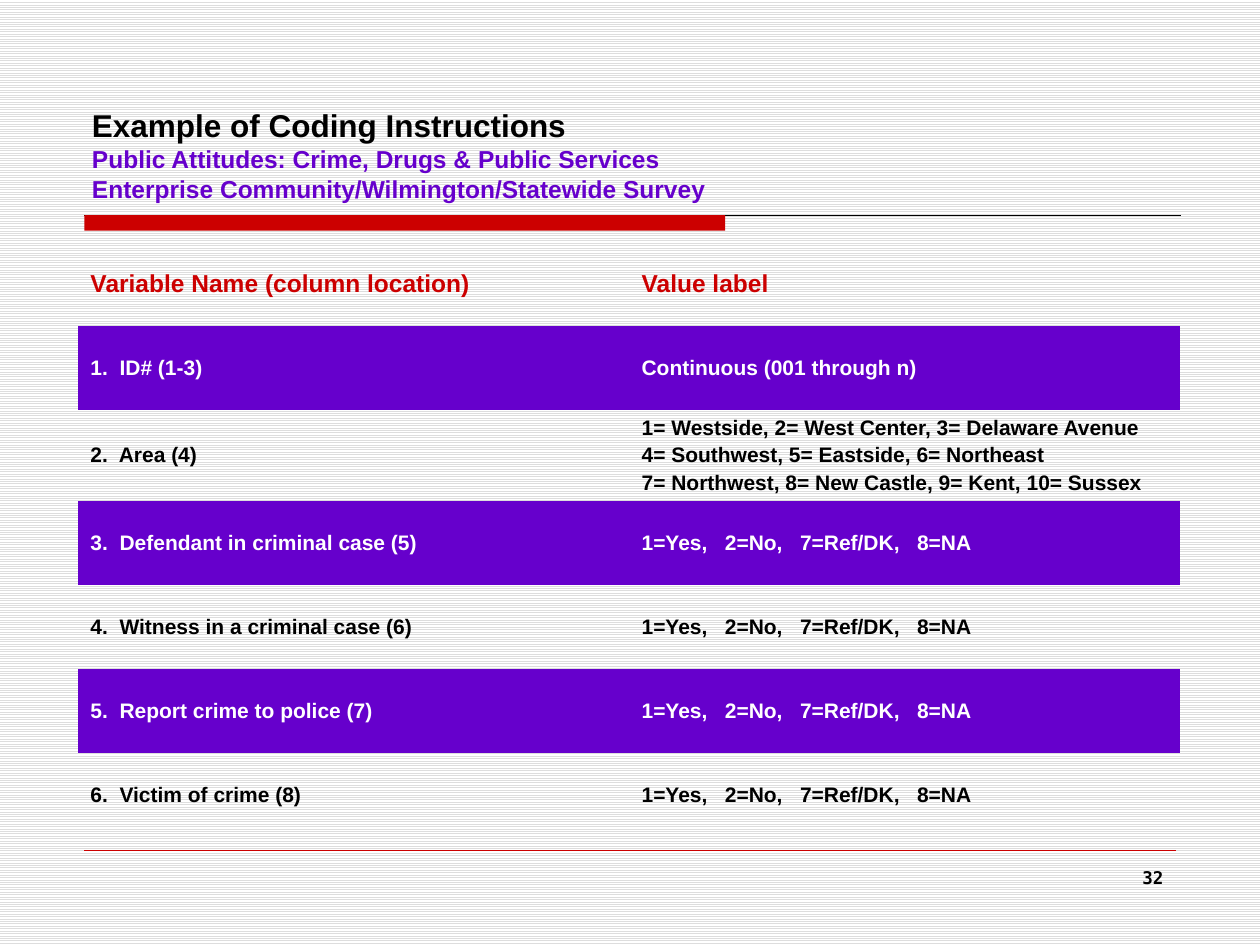
from lxml import etree
from pptx import Presentation
from pptx.dml.color import RGBColor
from pptx.enum.dml import MSO_PATTERN
from pptx.enum.shapes import MSO_CONNECTOR, MSO_SHAPE
from pptx.enum.text import MSO_ANCHOR, MSO_AUTO_SIZE, PP_ALIGN
from pptx.oxml.ns import qn
from pptx.util import Cm, Pt

BLACK = RGBColor(0x00, 0x00, 0x00)
WHITE = RGBColor(0xFF, 0xFF, 0xFF)
GREY = RGBColor(0xDD, 0xDD, 0xDD)
RED = RGBColor(0xCC, 0x00, 0x00)
PURPLE = RGBColor(0x66, 0x00, 0xCC)
STRIPES = MSO_PATTERN.LIGHT_HORIZONTAL
STRAIGHT = MSO_CONNECTOR.STRAIGHT
BOX = MSO_SHAPE.RECTANGLE
LEFT, RIGHT = PP_ALIGN.LEFT, PP_ALIGN.RIGHT
MIDDLE, BOTTOM = MSO_ANCHOR.MIDDLE, MSO_ANCHOR.BOTTOM
FIXED = MSO_AUTO_SIZE.NONE
PLAIN = "{2D5ABB26-0587-4C30-8999-92F81FD0307C}"  # table without style or grid


def write(para, text, size=12, color=BLACK, font="Arial"):
    run = para.add_run()
    run.text = text
    run.font.name = font
    run.font.size = Pt(size)
    run.font.bold = True
    run.font.color.rgb = color


deck = Presentation()
deck.slide_width, deck.slide_height = Cm(25.4), Cm(19.05)
slide = deck.slides.add_slide(deck.slide_layouts[5])
shapes = slide.shapes

# Striped background
back = slide.background.fill
back.patterned()
back.pattern = STRIPES
back.fore_color.rgb = GREY
back.back_color.rgb = WHITE

# Rules under the title and above the page number
for start, end, top, color, width in [
    (1.7, 23.8, 4.34, BLACK, 0.75),
    (1.7, 23.7, 17.14, RED, 0.25),
]:
    rule = shapes.add_connector(STRAIGHT, Cm(start), Cm(top), Cm(end), Cm(top))
    rule.line.color.rgb = color
    rule.line.width = Pt(width)
    etree.SubElement(rule._element.spPr, qn("a:effectLst"))

# Red bar
bar = shapes.add_shape(BOX, Cm(1.7), Cm(4.34), Cm(12.92), Cm(0.31))
bar.shadow.inherit = False
bar.fill.solid()
bar.fill.fore_color.rgb = RED
bar.line.fill.background()

# Title
title = shapes.title
title.left, title.top = Cm(1.6), Cm(0.85)
title.width, title.height = Cm(22.22), Cm(3.37)
frame = title.text_frame
frame.word_wrap = True
frame.auto_size = FIXED
frame.vertical_anchor = BOTTOM
para = frame.paragraphs[0]
para.alignment = LEFT
write(para, "Example of Coding Instructions", size=18)
for line in [
    "Public Attitudes: Crime, Drugs & Public Services",
    "Enterprise Community/Wilmington/Statewide Survey",
]:
    para.add_line_break()
    write(para, line, size=14, color=PURPLE)

# Coding table: purple on every second row
ANSWERS = "1=Yes,   2=No,   7=Ref/DK,   8=NA"
AREAS = """1= Westside, 2= West Center, 3= Delaware Avenue
4= Southwest, 5= Eastside, 6= Northeast
7= Northwest, 8= New Castle, 9= Kent, 10= Sussex"""
ROWS = [
    ("Variable Name (column location)", "Value label"),
    ("1.  ID# (1-3)", "Continuous (001 through n)"),
    ("2.  Area (4)", AREAS),
    ("3.  Defendant in criminal case (5)", ANSWERS),
    ("4.  Witness in a criminal case (6)", ANSWERS),
    ("5.  Report crime to police (7)", ANSWERS),
    ("6.  Victim of crime (8)", ANSWERS),
]
grid = shapes.add_table(len(ROWS), 2, Cm(1.57), Cm(4.88),
                        Cm(22.22), Cm(1.69 * len(ROWS))).table
grid.first_row = grid.horz_banding = False
grid._tbl.tblPr.find(qn("a:tableStyleId")).text = PLAIN
for r, row in enumerate(ROWS):
    grid.rows[r].height = Cm(1.69)
    banded = r % 2 == 1
    size = 12 if r else 14
    color = RED if r == 0 else WHITE if banded else BLACK
    for c, text in enumerate(row):
        cell = grid.cell(r, c)
        cell.vertical_anchor = MIDDLE
        if banded:
            cell.fill.solid()
            cell.fill.fore_color.rgb = PURPLE
        else:
            cell.fill.background()
        frame = cell.text_frame
        for n, line in enumerate(text.split("\n")):
            para = frame.add_paragraph() if n else frame.paragraphs[0]
            para.space_before = Pt(size * 0.2)
            write(para, line, size=size, color=color)

# Page number
page = shapes.add_textbox(Cm(18.2), Cm(17.35), Cm(5.5), Cm(1.32))
page.text_frame.word_wrap = True
para = page.text_frame.paragraphs[0]
para.alignment = RIGHT
write(para, "32", size=10, font="DejaVu Sans Mono")

deck.save("out.pptx")
